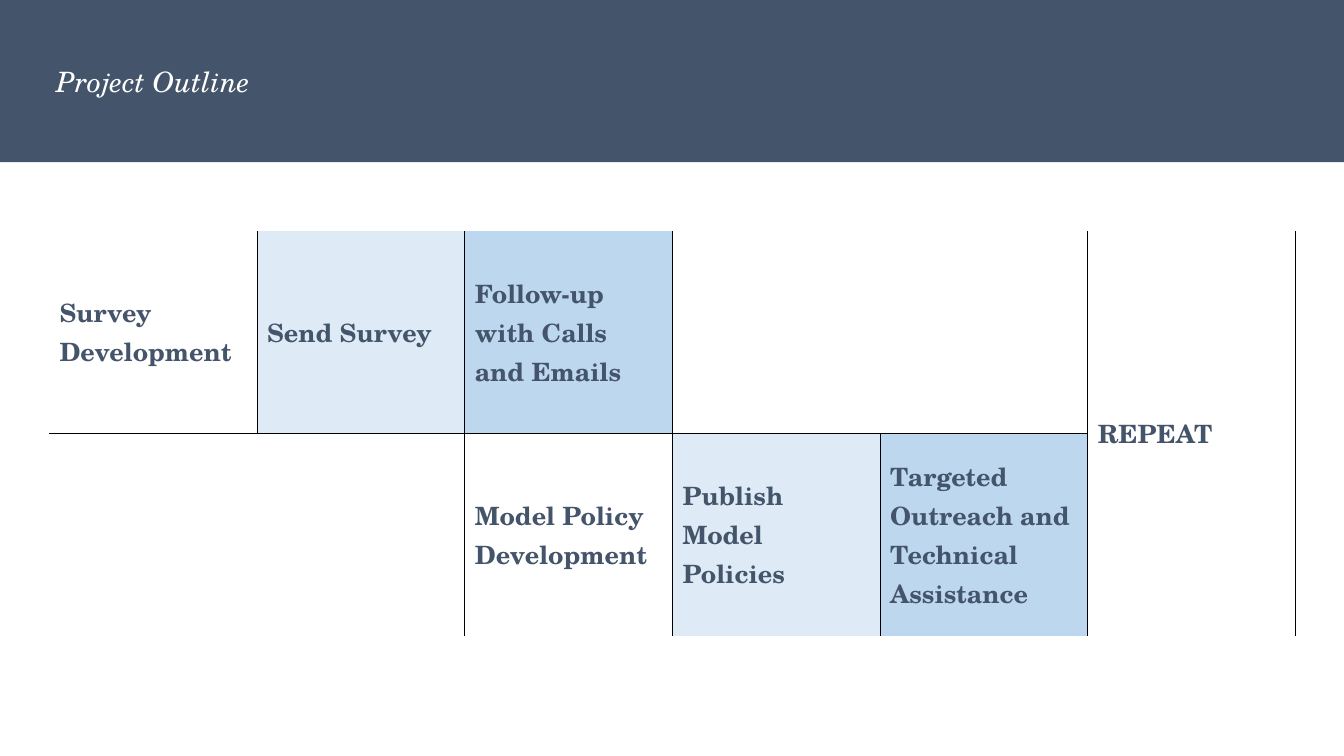
from dataclasses import dataclass

from lxml.etree import SubElement
from pptx import Presentation
from pptx.dml.color import RGBColor as RGB
from pptx.enum.shapes import MSO_SHAPE as SHAPE
from pptx.enum.text import MSO_ANCHOR as ANCHOR, MSO_AUTO_SIZE as AUTO
from pptx.oxml.ns import qn
from pptx.util import Inches, Pt

COLORS = {
    "navy": "44546A",
    "white": "FFFFFF",
    "pale": "DEEBF7",
    "sky": "BDD7EE",
    "line": "000000",
}
FONT = "TeX Gyre Schola"
TITLE = {"name": FONT, "size": Pt(20), "italic": True}
LABEL = {"name": FONT, "size": Pt(18), "bold": True}
WIDTH, HEIGHT = Inches(13.33), Inches(7.5)
COLS, ROWS = 6, 2
COL, ROW = Inches(2.06), Inches(2.01)


@dataclass
class Step:
    row: int
    col: int
    text: str = ""
    fill: str = ""
    edges: str = ""
    rows: int = 1
    cols: int = 1


STEPS = [
    Step(0, 0, "Survey Development", edges="RB"),
    Step(0, 1, "Send Survey", "pale", "LRB"),
    Step(0, 2, "Follow-up with Calls and Emails", "sky", "LRB"),
    Step(0, 3, edges="LRB", cols=2),
    Step(0, 5, "REPEAT", edges="LR", rows=2),
    Step(1, 0, edges="TR", cols=2),
    Step(1, 2, "Model Policy Development", edges="LTR"),
    Step(1, 3, "Publish Model Policies", "pale", "LTR"),
    Step(1, 4, "Targeted Outreach and Technical Assistance", "sky", "LTR"),
]


def write(tf, text: str, style: dict, color: str) -> None:
    r = tf.paragraphs[0].add_run()
    r.text = text
    for key, value in style.items():
        setattr(r.font, key, value)
    r.font.color.rgb = RGB.from_string(COLORS[color])


def set_edges(cell, edges: str) -> None:
    tc_pr = cell._tc.get_or_add_tcPr()
    for side in "LRTB":
        ln = SubElement(tc_pr, qn(f"a:ln{side}"), w=str(Pt(1)))
        if side in edges:
            fill = SubElement(ln, qn("a:solidFill"))
            SubElement(fill, qn("a:srgbClr"), val=COLORS["line"])
        else:
            SubElement(ln, qn("a:noFill"))


def inner_edges(step: Step, row: int, col: int) -> str:
    outer = {
        "L": col == step.col,
        "R": col == step.col + step.cols - 1,
        "T": row == step.row,
        "B": row == step.row + step.rows - 1,
    }
    return "".join(side for side in step.edges if outer[side])


def draw_step(table, step: Step) -> None:
    cell = table.cell(step.row, step.col)
    for row in range(step.row, step.row + step.rows):
        for col in range(step.col, step.col + step.cols):
            part = table.cell(row, col)
            set_edges(part, step.edges if part == cell else inner_edges(step, row, col))
            if step.fill:
                part.fill.solid()
                part.fill.fore_color.rgb = RGB.from_string(COLORS[step.fill])
            else:
                part.fill.background()
    if step.rows * step.cols > 1:
        cell.merge(table.cell(step.row + step.rows - 1, step.col + step.cols - 1))
    cell.vertical_anchor = ANCHOR.MIDDLE
    if step.text:
        write(cell.text_frame, step.text, LABEL, "navy")


def draw_header(s) -> None:
    sp = s.shapes.add_shape(SHAPE.RECTANGLE, 0, 0, WIDTH, Inches(1.61))
    sp.shadow.inherit = False
    sp.fill.solid()
    sp.fill.fore_color.rgb = RGB.from_string(COLORS["navy"])
    sp.line.fill.background()
    tf = s.shapes.add_textbox(Inches(0.46), Inches(0.59), Inches(2.14), Inches(0.44)).text_frame
    tf.word_wrap = False
    tf.auto_size = AUTO.SHAPE_TO_FIT_TEXT
    write(tf, "Project Outline", TITLE, "white")


def draw_outline(s) -> None:
    table = s.shapes.add_table(
        ROWS, COLS, Inches(0.49), Inches(2.29), COLS * COL, ROWS * ROW
    ).table
    table.first_row = table.horz_banding = False
    for step in STEPS:
        draw_step(table, step)


def main() -> None:
    prs = Presentation()
    prs.slide_width, prs.slide_height = WIDTH, HEIGHT
    s = prs.slides.add_slide(prs.slide_layouts[6])
    draw_header(s)
    draw_outline(s)
    prs.save("out.pptx")


if __name__ == "__main__":
    main()
